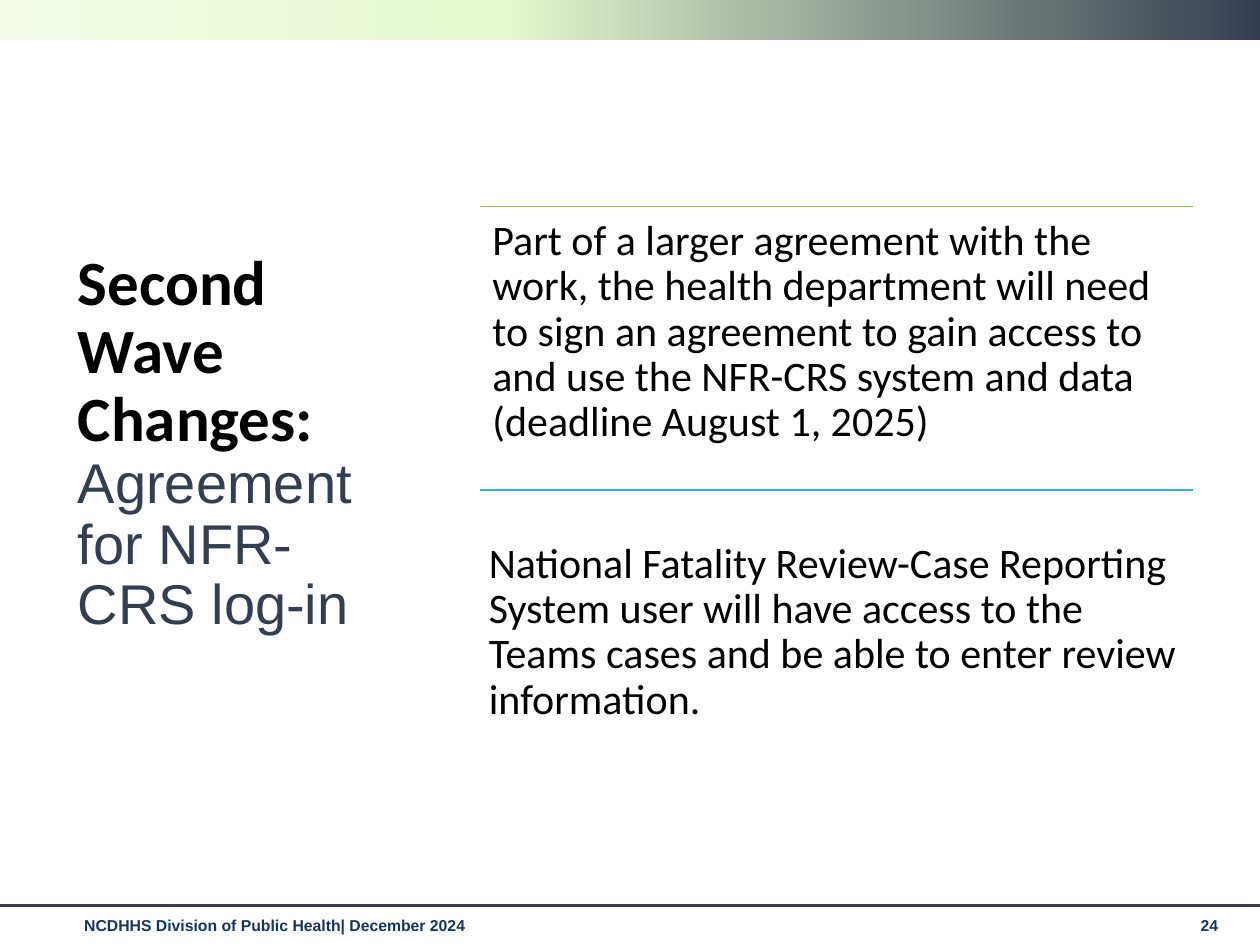
from copy import deepcopy

from pptx import Presentation
from pptx.dml.color import RGBColor
from pptx.enum.shapes import MSO_CONNECTOR, MSO_SHAPE
from pptx.enum.text import MSO_ANCHOR
from pptx.oxml.ns import qn
from pptx.oxml.xmlchemy import OxmlElement
from pptx.util import Inches, Pt

NAVY = "333F50"
FOOTER = {"name": "Arial", "size": Pt(9), "bold": True, "color": "15365E"}
HEADING = {"name": "Calibri", "size": Pt(36), "bold": True, "color": "000000"}
SUBHEADING = {"name": "Arial", "size": Pt(32), "bold": False, "color": NAVY}
BODY = {"name": "Calibri", "size": Pt(24), "bold": False, "color": "000000"}


def color(value):
    return RGBColor.from_string(value)


def format_font(font, values):
    for name, value in values.items():
        if name == "color":
            font.color.rgb = color(value)
        else:
            setattr(font, name, value)


def add_text(slide, box, runs, inset=(0.1, 0.05), anchor=MSO_ANCHOR.TOP, spacing=1.0):
    shape = slide.shapes.add_textbox(*map(Inches, box))
    horizontal, vertical = map(Inches, inset)
    frame_format = {
        "word_wrap": True,
        "vertical_anchor": anchor,
        "margin_left": horizontal,
        "margin_right": horizontal,
        "margin_top": vertical,
        "margin_bottom": vertical,
    }
    for name, value in frame_format.items():
        setattr(shape.text_frame, name, value)
    paragraph = shape.text_frame.paragraphs[0]
    paragraph.line_spacing = spacing
    for text, values in runs:
        run = paragraph.add_run()
        run.text = text
        format_font(run.font, values)


def add_rule(slide, left, right, top, line_color, width):
    line = slide.shapes.add_connector(
        MSO_CONNECTOR.STRAIGHT, Inches(left), Inches(top), Inches(right), Inches(top)
    )
    line.line.color.rgb = color(line_color)
    line.line.width = Pt(width)
    line._element.spPr.append(OxmlElement("a:effectLst"))


def add_gradient_band(slide, box, stops, angle):
    band = slide.shapes.add_shape(MSO_SHAPE.RECTANGLE, *map(Inches, box))
    band.shadow.inherit = False
    band.line.fill.background()
    band.fill.gradient()
    band.fill.gradient_angle = angle
    stop_list = band._element.spPr.find(qn("a:gradFill")).find(qn("a:gsLst"))
    stop_list.append(deepcopy(stop_list[-1]))
    for stop, (position, value) in zip(band.fill.gradient_stops, stops):
        stop.position = position
        stop.color.rgb = color(value)


def main():
    presentation = Presentation()
    presentation.slide_width = Inches(10)
    presentation.slide_height = Inches(7.5)
    slide = presentation.slides.add_slide(presentation.slide_layouts[6])

    add_gradient_band(
        slide, (0, 0, 10, 0.32), [(0, NAVY), (0.6, "E4F7CF"), (1, "F1FBE7")], 180
    )
    add_rule(slide, 0, 10, 7.19, NAVY, 1.75)
    footer = "NCDHHS Division of Public Health| December 2024"
    add_text(slide, (0.57, 7.22, 8.74, 0.29), [(footer, FOOTER)])
    add_text(slide, (9.43, 7.22, 0.44, 0.3), [("24", FOOTER)])

    title = [
        ("Second Wave Changes: ", HEADING),
        ("Agreement for NFR-CRS log-in", SUBHEADING),
    ]
    add_text(slide, (0.52, 0.7, 2.8, 5.65), title, anchor=MSO_ANCHOR.MIDDLE, spacing=0.9)

    points = [
        (1.64, "8BC145", 1.64, 2.25, 0.1,
         "Part of a larger agreement with the work, the health department will need "
         "to sign an agreement to gain access to and use the NFR-CRS system and data "
         "(deadline August 1, 2025)"),
        (3.89, "36AFCE", 4.23, 1.6, 0.07,
         "National Fatality Review-Case Reporting System user will have access to the "
         "Teams cases and be able to enter review information."),
    ]
    for rule_top, rule_color, top, height, inset, text in points:
        add_rule(slide, 3.81, 9.47, rule_top, rule_color, 1)
        add_text(
            slide, (3.81, top, 5.66, height), [(text, BODY)], (inset, inset), spacing=0.9
        )

    presentation.save("out.pptx")


if __name__ == "__main__":
    main()
